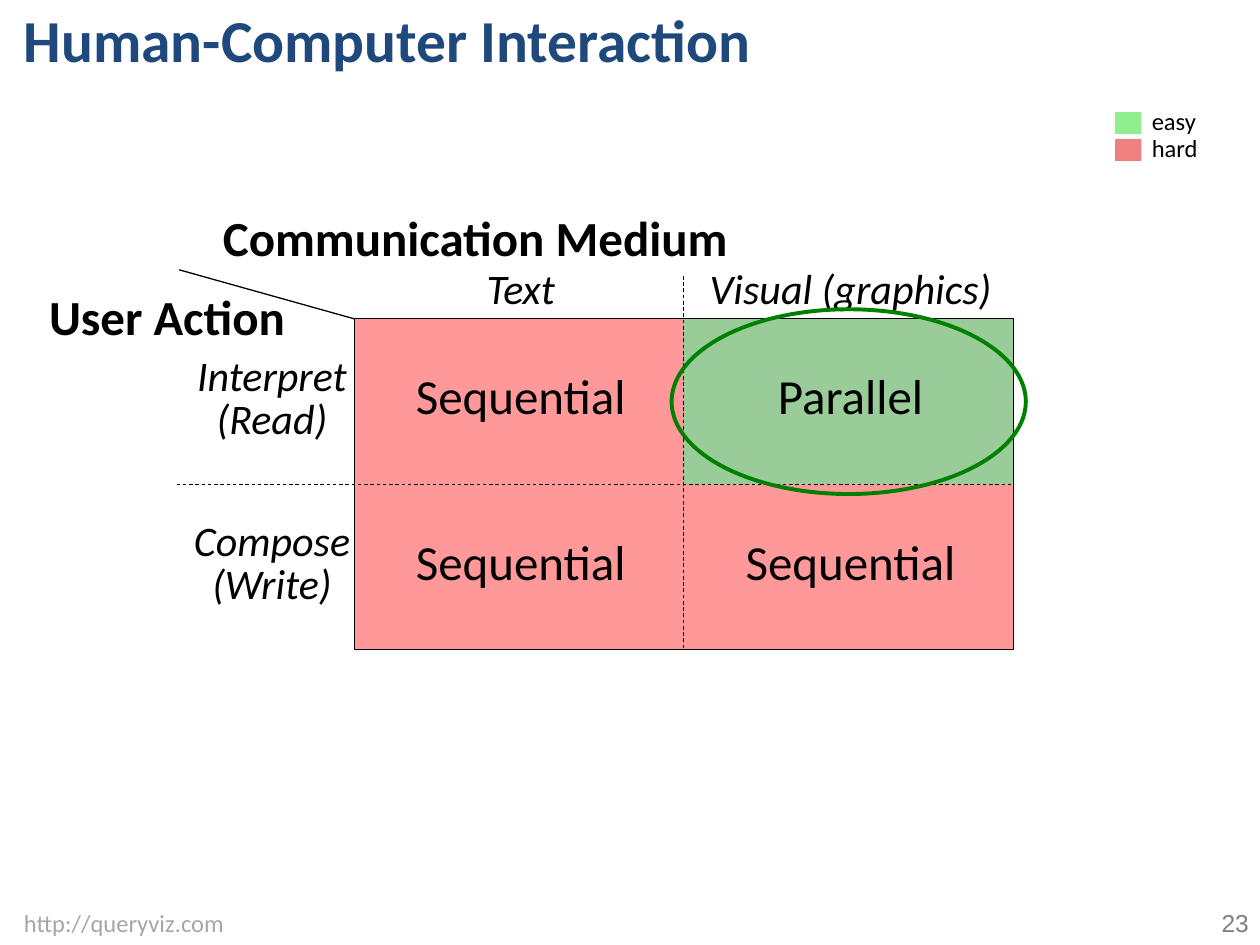
from lxml import etree
from pptx import Presentation
from pptx import util as u
from pptx.dml.color import RGBColor
from pptx.enum import dml, shapes, text
from pptx.oxml.ns import qn

Pt = u.Pt
NAVY = RGBColor(0x1F, 0x49, 0x7D)
BLACK = RGBColor(0, 0, 0)
RED = RGBColor(0xFF, 0, 0)
GREEN = RGBColor(0, 0x80, 0)
LIGHT_GREEN = RGBColor(0x90, 0xEE, 0x90)
LIGHT_RED = RGBColor(0xF0, 0x80, 0x80)
LIGHT_GRAY = RGBColor(0xA6, 0xA6, 0xA6)
GRAY = RGBColor(0x7F, 0x7F, 0x7F)
LEFT, CENTER, RIGHT = text.PP_ALIGN.LEFT, text.PP_ALIGN.CENTER, text.PP_ALIGN.RIGHT
TOP, MIDDLE = text.MSO_ANCHOR.TOP, text.MSO_ANCHOR.MIDDLE


def format_text(shape, content, size, color=BLACK, align=LEFT, anchor=MIDDLE,
                spacing=0.85, bold=False, italic=False, font="Calibri"):
    frame = shape.text_frame
    frame.margin_left = frame.margin_right = frame.margin_top = frame.margin_bottom = 0
    frame.word_wrap = False
    frame.auto_size = text.MSO_AUTO_SIZE.SHAPE_TO_FIT_TEXT
    frame.vertical_anchor = anchor
    frame.text = content
    for paragraph in frame.paragraphs:
        paragraph.alignment = align
        paragraph.line_spacing = spacing
        paragraph.font.name = font
        paragraph.font.size = Pt(size)
        paragraph.font.bold = bold
        paragraph.font.italic = italic
        paragraph.font.color.rgb = color


def add_text(slide, box, content, size, **style):
    shape = slide.shapes.add_textbox(*map(Pt, box))
    format_text(shape, content, size, **style)


def add_label(slide, center_x, center_y, width, height, content, size, **style):
    box = (center_x - width / 2, center_y - height / 2, width, height)
    add_text(slide, box, content, size, align=CENTER, **style)


def add_figure(slide, kind, box, fill=None, line=None, weight=0.5, alpha=None):
    shape = slide.shapes.add_shape(kind, *map(Pt, box))
    shape.shadow.inherit = False
    if fill is None:
        shape.fill.background()
    else:
        shape.fill.solid()
        shape.fill.fore_color.rgb = fill
    if alpha is not None:
        color = shape.element.spPr.find(qn("a:solidFill"))[0]
        etree.SubElement(color, qn("a:alpha")).set("val", str(alpha * 1000))
    if line is None:
        shape.line.fill.background()
    else:
        shape.line.color.rgb = line
        shape.line.width = Pt(weight)
    return shape


def add_line(slide, start, end, weight=0.5, dashed=False):
    line = slide.shapes.add_connector(
        shapes.MSO_CONNECTOR.STRAIGHT, *map(Pt, (*start, *end)))
    line.line.color.rgb = BLACK
    line.line.width = Pt(weight)
    if dashed:
        line.line.dash_style = dml.MSO_LINE.DASH
    etree.SubElement(line._element.spPr, qn("a:effectLst"))
    return line


def add_title(slide, box):
    title = slide.shapes.title
    title.left, title.top, title.width, title.height = map(Pt, box)
    format_text(title, "Human-Computer Interaction", 34, color=NAVY,
                anchor=TOP, spacing=1, bold=True)


def add_matrix(slide, box):
    left, top, width, height = box
    cell_width, cell_height = width / 2, height / 2
    rectangle = shapes.MSO_SHAPE.RECTANGLE
    columns = [("Text", 48), ("Visual (graphics)", 168)]
    rows = [("Interpret\n(Read)", 93, ("Sequential", "Parallel")),
            ("Compose\n(Write)", 96, ("Sequential", "Sequential"))]

    for row, (_, _, modes) in enumerate(rows):
        for column, mode in enumerate(modes):
            cell = (left + column * cell_width, top + row * cell_height,
                    cell_width, cell_height)
            add_figure(slide, rectangle, cell, alpha=40,
                       fill=GREEN if mode == "Parallel" else RED)
    frame = add_figure(slide, rectangle, box, line=BLACK)

    middle_x, middle_y = left + cell_width, top + cell_height
    column_divider = add_line(slide, (middle_x, top - 24.5),
                              (middle_x, top + height), dashed=True)
    column_divider.end_connect(frame, 2)
    row_divider = add_line(slide, (left - 101.5, middle_y),
                           (left + width, middle_y), dashed=True)
    row_divider.end_connect(frame, 3)
    add_line(slide, (left, top), (left - 100, top - 28), weight=0.75)

    for column, (name, label_width) in enumerate(columns):
        add_label(slide, left + (column + 0.5) * cell_width + 1, top - 15.5,
                  label_width, 25, name, 24, italic=True)
    for row, (name, label_width, modes) in enumerate(rows):
        center_y = top + (row + 0.5) * cell_height - 1
        add_label(slide, left - 47, center_y, label_width, 50.5, name, 24, italic=True)
        for column, mode in enumerate(modes):
            add_label(slide, left + (column + 0.5) * cell_width + 1, center_y,
                      85 if mode == "Parallel" else 122, 29.5, mode, 28)

    add_label(slide, left - 107, top - (-1), 136, 29.5, "User Action", 28, bold=True)
    add_text(slide, (left - 75, top - 59, 292, 29.5), "Communication Medium", 28,
             bold=True)
    add_figure(slide, shapes.MSO_SHAPE.OVAL,
               (middle_x - 7, top - 5.5, cell_width + 14, cell_height + 11),
               line=GREEN, weight=2.25)


def add_legend(slide, box):
    left, top, width, height = box
    entries = [("easy", LIGHT_GREEN), ("hard", LIGHT_RED)]
    pitch = height / len(entries)
    for index, (name, color) in enumerate(entries):
        y = top + index * pitch
        add_figure(slide, shapes.MSO_SHAPE.RECTANGLE, (left, y, 15, 12.5), fill=color)
        add_text(slide, (left + 21, y - 1.2, width - 21, 15), name, 14)


def add_footer(slide, box):
    left, top, width, height = box
    add_text(slide, (left, top, 115, height), "http://queryviz.com", 14,
             color=LIGHT_GRAY, anchor=TOP, spacing=1)
    add_text(slide, (left + width - 17, top, 17, height), "23", 14, color=GRAY,
             align=RIGHT, anchor=TOP, spacing=1, font="Arial")


def main():
    presentation = Presentation()
    presentation.slide_width, presentation.slide_height = Pt(720), Pt(540)
    slide = presentation.slides.add_slide(presentation.slide_layouts[5])
    add_title(slide, (13.7, 1.5, 422, 41))
    add_matrix(slide, (202.4, 182.2, 376.8, 189.2))
    add_legend(slide, (637.2, 64, 51, 31))
    add_footer(slide, (13.7, 519, 700, 17))
    presentation.save("out.pptx")


if __name__ == "__main__":
    main()
